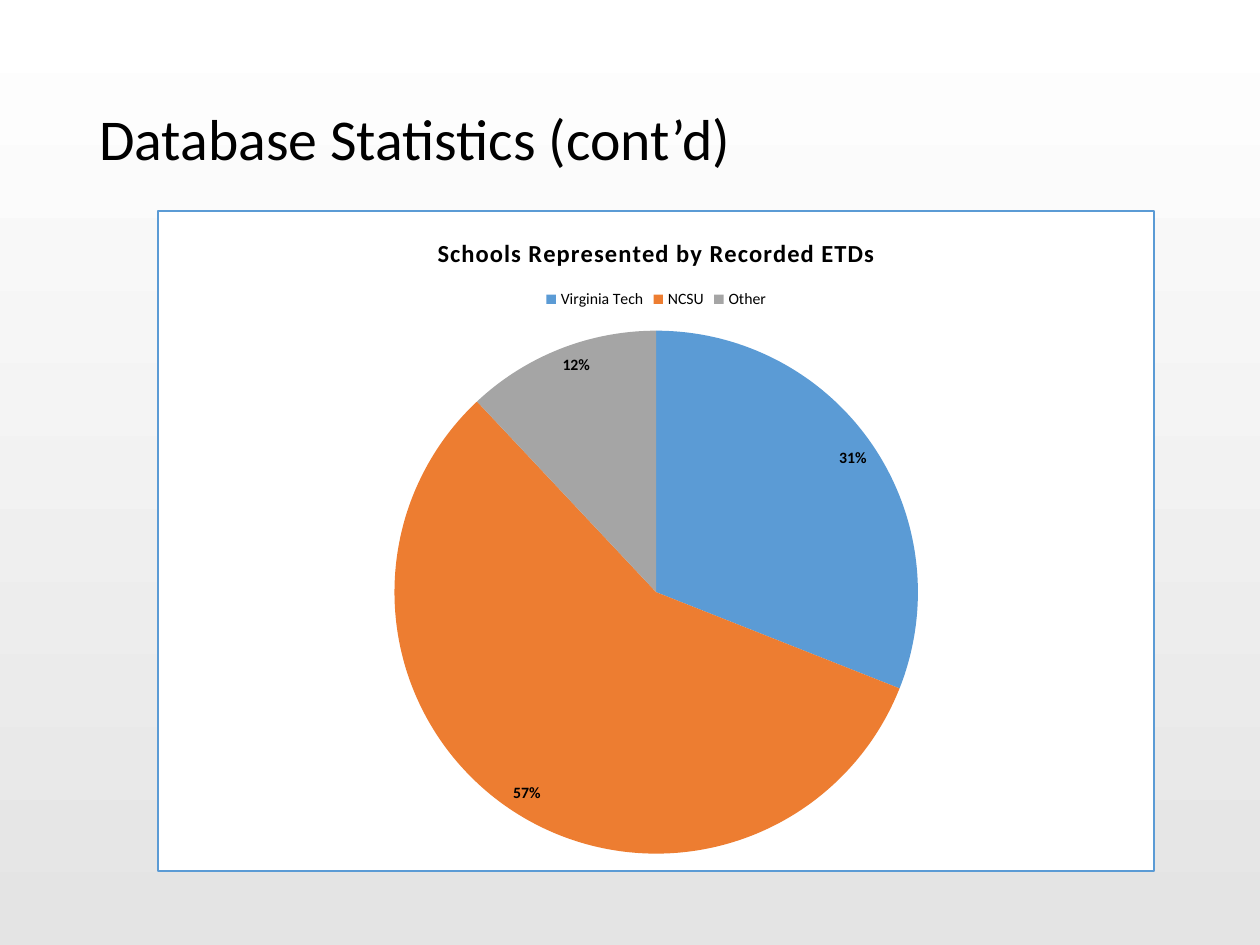
import pptx
import pptx.chart.data
import pptx.dml.color
import pptx.enum.chart
import pptx.enum.text
import pptx.oxml
import pptx.oxml.ns
import pptx.util

Pt = pptx.util.Pt

HEADING = "Database Statistics (cont’d)"
CHART_TITLE = "Schools Represented by Recorded ETDs"
SCHOOLS = [("Virginia Tech", 31, "blue"), ("NCSU", 57, "orange"), ("Other", 12, "gray")]

FONT = "Calibri"
COLORS = {
    "black": "000000",
    "white": "FFFFFF",
    "shade": "E4E4E4",
    "blue": "5B9BD5",
    "orange": "ED7D31",
    "gray": "A5A5A5",
}


def rgb(name):
    return pptx.dml.color.RGBColor.from_string(COLORS[name])


def format_font(font, size, bold=False):
    font.name = FONT
    font.size = Pt(size)
    font.bold = bold
    font.color.rgb = rgb("black")


def write_text(frame, text, size, bold=False, align=None, line_spacing=None, tracking=None):
    """Fill a text frame with one paragraph; tracking is in hundredths of a point."""
    paragraph = frame.paragraphs[0]
    paragraph.alignment = align
    paragraph.line_spacing = line_spacing
    run = paragraph.add_run()
    run.text = text
    format_font(run.font, size, bold)
    if tracking:
        run.font._element.set("spc", str(tracking))


def frame_chart(chart, fill, border):
    """Give the whole chart area a fill and a 1 pt border."""
    area = pptx.oxml.parse_xml(
        f'<c:spPr {pptx.oxml.ns.nsdecls("c", "a")}>'
        f'<a:solidFill><a:srgbClr val="{COLORS[fill]}"/></a:solidFill>'
        f'<a:ln w="{Pt(1)}"><a:solidFill><a:srgbClr val="{COLORS[border]}"/></a:solidFill></a:ln>'
        "</c:spPr>"
    )
    chart._chartSpace.find(pptx.oxml.ns.qn("c:chart")).addnext(area)


def add_background(slide):
    fill = slide.background.fill
    fill.gradient()
    fill.gradient_angle = 270
    for stop, name in zip(fill.gradient_stops, ("white", "shade")):
        stop.color.rgb = rgb(name)


def add_heading(slide):
    heading = slide.shapes.title
    heading.left, heading.top, heading.width, heading.height = Pt(49.5), Pt(28.75), Pt(621), Pt(104.4)
    heading.text_frame.vertical_anchor = pptx.enum.text.MSO_ANCHOR.MIDDLE
    heading.text_frame.auto_size = pptx.enum.text.MSO_AUTO_SIZE.NONE
    write_text(heading.text_frame, HEADING, 33, align=pptx.enum.text.PP_ALIGN.LEFT, line_spacing=0.9)


def add_school_chart(slide):
    shares = pptx.chart.data.CategoryChartData()
    shares.categories = [school for school, _, _ in SCHOOLS]
    shares.add_series(CHART_TITLE, [share for _, share, _ in SCHOOLS])
    chart = slide.shapes.add_chart(
        pptx.enum.chart.XL_CHART_TYPE.PIE, Pt(90), Pt(120.25), Pt(570), Pt(378), shares
    ).chart
    format_font(chart.font, 10)
    frame_chart(chart, "white", "blue")

    chart.has_title = True
    write_text(chart.chart_title.text_frame, CHART_TITLE, 14, bold=True, tracking=50)
    chart.chart_title.include_in_layout = False

    chart.has_legend = True
    chart.legend.position = pptx.enum.chart.XL_LEGEND_POSITION.TOP
    chart.legend.include_in_layout = False
    format_font(chart.legend.font, 9)

    pie = chart.plots[0]
    pie.vary_by_categories = True
    for index, (_, _, color) in enumerate(SCHOOLS):
        slice_fill = pie.series[0].points[index].format.fill
        slice_fill.solid()
        slice_fill.fore_color.rgb = rgb(color)

    labels = pie.series[0].data_labels
    labels.show_value = False
    labels.show_percentage = True
    labels.number_format = "0%"
    labels.number_format_is_linked = False
    labels.position = pptx.enum.chart.XL_LABEL_POSITION.INSIDE_END
    format_font(labels.font, 9, bold=True)


def main():
    deck = pptx.Presentation()
    deck.slide_width, deck.slide_height = Pt(720), Pt(540)
    slide = deck.slides.add_slide(deck.slide_layouts[5])
    add_background(slide)
    add_heading(slide)
    add_school_chart(slide)
    deck.save("out.pptx")


if __name__ == "__main__":
    main()
